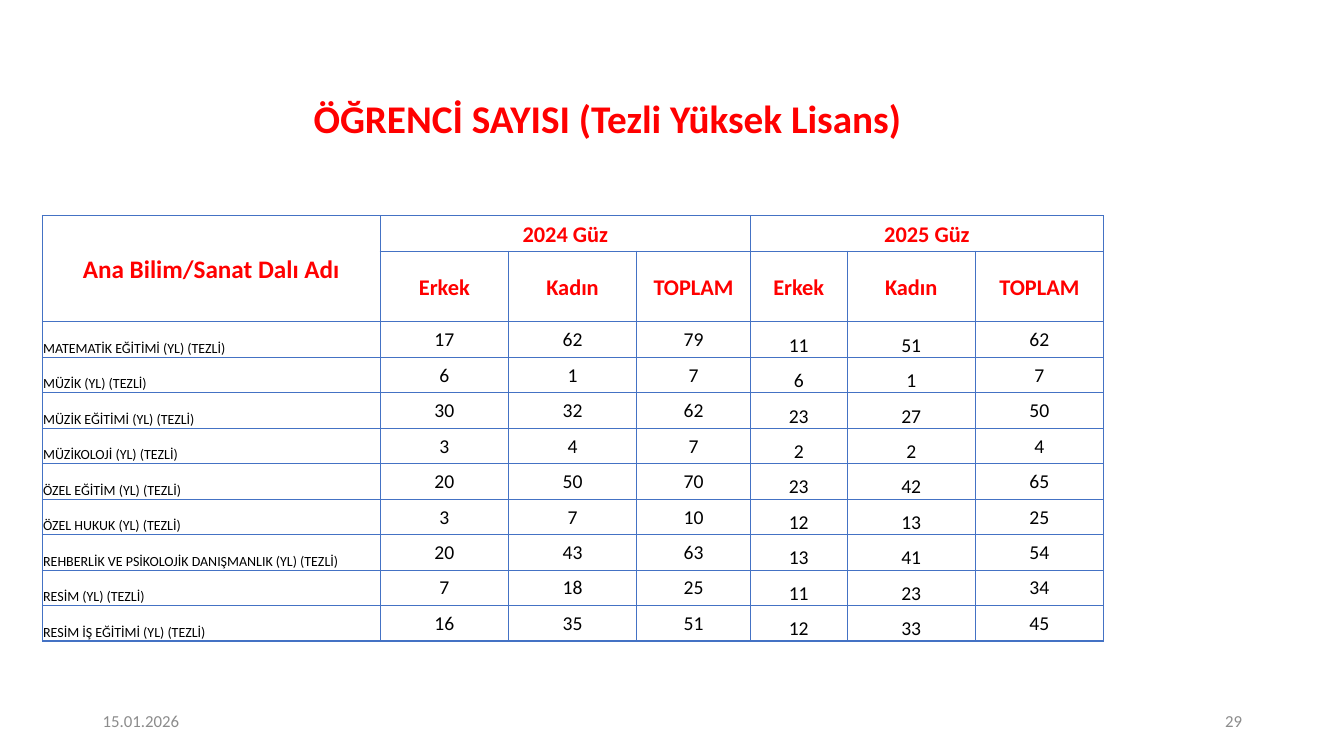
from lxml import etree
from pptx import Presentation
from pptx.dml.color import RGBColor
from pptx.enum.text import MSO_ANCHOR, PP_ALIGN
from pptx.oxml.ns import qn
from pptx.util import Emu, Pt

LEFT, CENTER, RIGHT = PP_ALIGN.LEFT, PP_ALIGN.CENTER, PP_ALIGN.RIGHT
MIDDLE, BOTTOM = MSO_ANCHOR.MIDDLE, MSO_ANCHOR.BOTTOM
PX_PER_INCH = 250
RED, BLACK, GREY, BLUE = "FF0000", "000000", "8C8C8C", "4472C4"

COLUMN_WIDTHS = [838, 318, 318, 282, 240, 318, 318]
ROW_HEIGHT, SUBHEADER_HEIGHT = 88, 175
BOTTOM_COLUMNS = (0, 4, 5)
GENDERS = ["Erkek", "Kadın", "TOPLAM"]
HEADERS = [
    ["Ana Bilim/Sanat Dalı Adı", "2024 Güz", "", "", "2025 Güz", "", ""],
    ["", *GENDERS, *GENDERS],
]
PROGRAMS = [
    ("MATEMATİK EĞİTİMİ (YL) (TEZLİ)", 17, 62, 79, 11, 51, 62),
    ("MÜZİK (YL) (TEZLİ)", 6, 1, 7, 6, 1, 7),
    ("MÜZİK EĞİTİMİ (YL) (TEZLİ)", 30, 32, 62, 23, 27, 50),
    ("MÜZİKOLOJİ (YL) (TEZLİ)", 3, 4, 7, 2, 2, 4),
    ("ÖZEL EĞİTİM (YL) (TEZLİ)", 20, 50, 70, 23, 42, 65),
    ("ÖZEL HUKUK (YL) (TEZLİ)", 3, 7, 10, 12, 13, 25),
    ("REHBERLİK VE PSİKOLOJİK DANIŞMANLIK (YL) (TEZLİ)", 20, 43, 63, 13, 41, 54),
    ("RESİM (YL) (TEZLİ)", 7, 18, 25, 11, 23, 34),
    ("RESİM İŞ EĞİTİMİ (YL) (TEZLİ)", 16, 35, 51, 12, 33, 45),
]


def px(n):
    return Emu(round(n * 914400 / PX_PER_INCH))


def rgb(value):
    return RGBColor.from_string(value)


class SlideBuilder:
    def __init__(self, slide, font):
        self.slide = slide
        self.font = font

    def set_text(self, tf, text, size, color, align=LEFT, bold=False, spacing=1.0):
        tf.text = text
        p = tf.paragraphs[0]
        p.alignment = align
        p.line_spacing = spacing
        for r in p.runs:
            r.font.name = self.font
            r.font.size = Pt(size)
            r.font.bold = bold
            r.font.color.rgb = rgb(color)

    def text(self, x, y, w, h, text, size, color, **style):
        tf = self.slide.shapes.add_textbox(px(x), px(y), px(w), px(h)).text_frame
        tf.word_wrap = True
        tf.vertical_anchor = MIDDLE
        self.set_text(tf, text, size, color, **style)

    def table(self, x, y, widths, heights):
        """Add an unstyled table with a thin line around every cell."""
        frame = self.slide.shapes.add_table(
            len(heights), len(widths), px(x), px(y), px(sum(widths)), px(sum(heights)))
        table = frame.table
        table.first_row = table.horz_banding = False
        for column, width in zip(table.columns, widths):
            column.width = px(width)
        for row, height in zip(table.rows, heights):
            row.height = px(height)
        for cell in table.iter_cells():
            self.outline(cell)
            cell.fill.background()
        return table

    def outline(self, cell):
        tc_pr = cell._tc.get_or_add_tcPr()
        for side in ("a:lnL", "a:lnR", "a:lnT", "a:lnB"):
            line = etree.SubElement(tc_pr, qn(side), w=str(Pt(1)))
            fill = etree.SubElement(line, qn("a:solidFill"))
            etree.SubElement(fill, qn("a:srgbClr"), val=BLUE)

    def cell(self, cell, text, size, color, side_margin, anchor=MIDDLE, **style):
        cell.margin_left = cell.margin_right = px(side_margin)
        cell.margin_top, cell.margin_bottom = px(2), 0
        cell.vertical_anchor = anchor
        self.set_text(cell.text_frame, text, size, color, **style)


def add_student_table(s):
    heights = [ROW_HEIGHT, SUBHEADER_HEIGHT] + [ROW_HEIGHT] * len(PROGRAMS)
    table = s.table(105, 535, COLUMN_WIDTHS, heights)
    table.cell(0, 0).merge(table.cell(1, 0))
    for first in (1, 4):
        table.cell(0, first).merge(table.cell(0, first + 2))

    for i, labels in enumerate(HEADERS):
        for j, label in enumerate(labels):
            if label:
                s.cell(table.cell(i, j), label, 16 if j else 18, RED,
                       0 if label == "TOPLAM" else 12,
                       align=CENTER, bold=True, spacing=1.07)

    for i, program in enumerate(PROGRAMS, start=len(HEADERS)):
        for j, value in enumerate(program):
            s.cell(table.cell(i, j), str(value), 14 if j else 10, BLACK, 2,
                   anchor=BOTTOM if j in BOTTOM_COLUMNS else MIDDLE,
                   align=CENTER if j else LEFT)


def main():
    prs = Presentation()
    prs.slide_width, prs.slide_height = px(3333), px(1875)
    s = SlideBuilder(prs.slides.add_slide(prs.slide_layouts[6]), "Calibri")
    s.text(70, 215, 2872, 170, "ÖĞRENCİ SAYISI (Tezli Yüksek Lisans)", 28, RED,
           align=CENTER, bold=True, spacing=0.9)
    s.text(230, 1738, 750, 100, "15.01.2026", 12, GREY)
    s.text(2355, 1738, 750, 100, "29", 12, GREY, align=RIGHT)
    add_student_table(s)
    prs.save("out.pptx")


if __name__ == "__main__":
    main()
